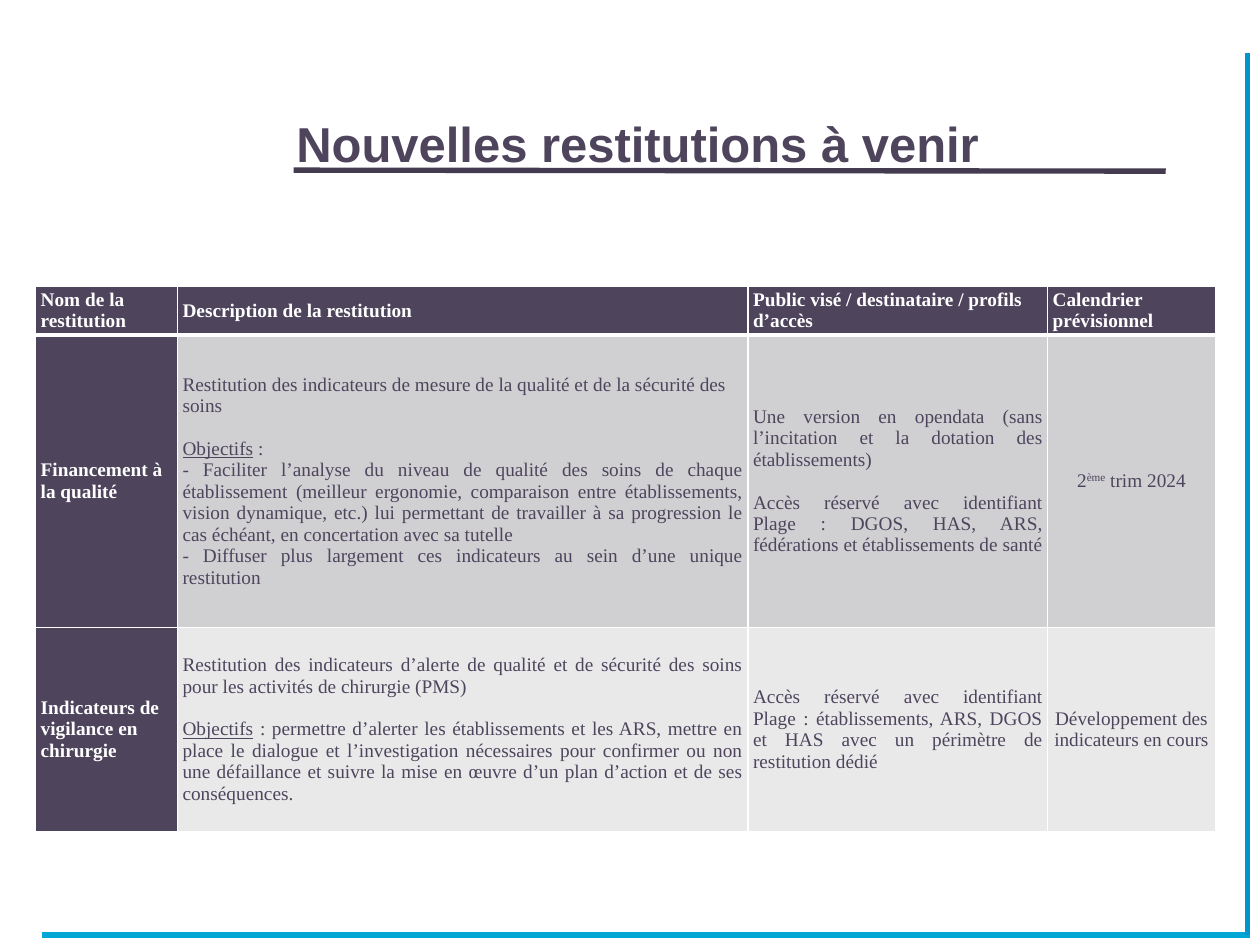
from dataclasses import dataclass

import pptx
import pptx.dml.color
import pptx.enum.shapes
import pptx.enum.text
import pptx.oxml.ns
import pptx.util
from lxml import etree

Cm = pptx.util.Cm
Pt = pptx.util.Pt
RGB = pptx.dml.color.RGBColor.from_string
qn = pptx.oxml.ns.qn
LEFT = pptx.enum.text.PP_ALIGN.LEFT
CENTER = pptx.enum.text.PP_ALIGN.CENTER
JUSTIFY = pptx.enum.text.PP_ALIGN.JUSTIFY


@dataclass(frozen=True)
class Theme:
    ink: str = "4E455D"
    white: str = "FFFFFF"
    title_rule: str = "453B50"
    bottom_rule: str = "02A7D5"
    right_rule: str = "0095CB"
    row_fills: tuple = ("D0CFD2", "E9E9EA")
    title_font: str = "Arial"
    table_font: str = "Times New Roman"
    title_size: float = 28
    table_size: float = 11
    gap: float = 12.2
    rule_width: float = 3.06


theme = Theme()


def write(paragraph, text, font=theme.table_font, size=theme.table_size,
          color=theme.ink, bold=False, underline=False, baseline=None):
    run = paragraph.add_run()
    run.text = text
    run.font.name = font
    run.font.size = Pt(size)
    run.font.bold = bold
    run.font.underline = underline
    run.font.color.rgb = RGB(color)
    if baseline:
        run.font._element.set("baseline", str(baseline * 1000))


def set_borders(cell, widths):
    """Draw white borders; widths gives points for left, right, top, bottom."""
    properties = cell._tc.get_or_add_tcPr()
    for index, (side, width) in enumerate(zip("LRTB", widths)):
        line = etree.Element(qn(f"a:ln{side}"), w=str(Pt(width)))
        fill = etree.SubElement(line, qn("a:solidFill"))
        etree.SubElement(fill, qn("a:srgbClr"), val=theme.white)
        properties.insert(index, line)


presentation = pptx.Presentation()
presentation.slide_width = Cm(25.4)
presentation.slide_height = Cm(19.05)
slide = presentation.slides.add_slide(presentation.slide_layouts[5])

# Rules: start x, start y, end x, end y, colour
rules = [
    (5.92, 3.43, 23.5, 3.45, theme.title_rule),
    (0.84, 18.85, 25.2, 18.85, theme.bottom_rule),
    (25.15, 18.85, 25.15, 1.07, theme.right_rule),
]
for *ends, color in rules:
    rule = slide.shapes.add_connector(
        pptx.enum.shapes.MSO_CONNECTOR.STRAIGHT, *map(Cm, ends))
    rule.line.color.rgb = RGB(color)
    rule.line.width = Pt(theme.rule_width)
    etree.SubElement(rule._element.spPr, qn("a:effectLst"))

title = slide.shapes.title
title.left, title.top, title.width, title.height = map(Cm, (5.72, 0.84, 16.94, 2.77))
title.text_frame.vertical_anchor = pptx.enum.text.MSO_ANCHOR.BOTTOM
title.text_frame.auto_size = pptx.enum.text.MSO_AUTO_SIZE.NONE
title.text_frame.word_wrap = True
title_paragraph = title.text_frame.paragraphs[0]
title_paragraph.alignment = LEFT
write(title_paragraph, "Nouvelles restitutions à venir",
      font=theme.title_font, size=theme.title_size, bold=True)

# Each cell is a list of paragraphs: alignment, space before, runs (text, format)
heading = {"color": theme.white, "bold": True}
underlined = {"underline": True}
headers = ["Nom de la restitution", "Description de la restitution",
           "Public visé / destinataire / profils d’accès", "Calendrier prévisionnel"]
rows = [
    [[(LEFT, 0, [(text, heading)])] for text in headers],
    [
        [(LEFT, 0, [("Financement à la qualité", heading)])],
        [
            (LEFT, 0, [("Restitution des indicateurs de mesure de la qualité et de la "
                        "sécurité des soins", {})]),
            (LEFT, theme.gap, [("Objectifs", underlined), (" :", {})]),
            (JUSTIFY, 0, [("- Faciliter l’analyse du niveau de qualité des soins de chaque "
                           "établissement (meilleur ergonomie, comparaison entre "
                           "établissements, vision dynamique, etc.) lui permettant de "
                           "travailler à sa progression le cas échéant, en concertation "
                           "avec sa tutelle ", {})]),
            (JUSTIFY, 0, [("- Diffuser plus largement ces indicateurs au sein d’une "
                           "unique restitution", {})]),
        ],
        [
            (JUSTIFY, 0, [("Une version en opendata (sans l’incitation et la dotation "
                           "des établissements)", {})]),
            (JUSTIFY, theme.gap, [("Accès réservé avec identifiant Plage : DGOS, HAS, ARS, "
                                   "fédérations et établissements de santé", {})]),
        ],
        [(CENTER, 0, [("2", {}), ("ème", {"baseline": 30}), (" trim 2024", {})])],
    ],
    [
        [(LEFT, 0, [("Indicateurs de vigilance en chirurgie", heading)])],
        [
            (JUSTIFY, 0, [("Restitution des indicateurs d’alerte de qualité et de sécurité "
                           "des soins pour les activités de chirurgie (PMS)", {})]),
            (JUSTIFY, theme.gap, [
                ("Objectifs", underlined),
                (" : permettre d’alerter les établissements et les ARS, mettre en place le "
                 "dialogue et l’investigation nécessaires pour confirmer ou non une "
                 "défaillance et suivre la mise en œuvre d’un plan d’action et de ses "
                 "conséquences.", {})]),
        ],
        [(JUSTIFY, 0, [("Accès réservé avec identifiant Plage : établissements, ARS, DGOS "
                        "et HAS avec un périmètre de restitution dédié", {})])],
        [(CENTER, 0, [("Développement des indicateurs en cours", {})])],
    ],
]
column_widths = [2.86, 11.5, 6.04, 3.38]
row_heights = [0.98, 5.9, 4.11]

table = slide.shapes.add_table(
    len(rows), len(column_widths), Cm(0.72), Cm(5.77),
    Cm(sum(column_widths)), Cm(sum(row_heights))).table
table.first_row = True
table.horz_banding = False
for column, width in zip(table.columns, column_widths):
    column.width = Cm(width)
for row, height in zip(table.rows, row_heights):
    row.height = Cm(height)

for row_index, row in enumerate(rows):
    for column_index, paragraphs in enumerate(row):
        cell = table.cell(row_index, column_index)
        is_heading = row_index == 0 or column_index == 0
        cell.fill.solid()
        cell.fill.fore_color.rgb = RGB(
            theme.ink if is_heading else theme.row_fills[row_index - 1])
        set_borders(cell, (1, 1, 3 if row_index == 1 else 1, 3 if row_index == 0 else 1))
        cell.vertical_anchor = pptx.enum.text.MSO_ANCHOR.MIDDLE
        cell.margin_left = cell.margin_right = Cm(0.1)
        cell.margin_top = cell.margin_bottom = Cm(0.05)
        for index, (alignment, space_before, runs) in enumerate(paragraphs):
            frame = cell.text_frame
            paragraph = frame.add_paragraph() if index else frame.paragraphs[0]
            paragraph.alignment = alignment
            if space_before:
                paragraph.space_before = Pt(space_before)
            for text, text_format in runs:
                write(paragraph, text, **text_format)

presentation.save("out.pptx")
